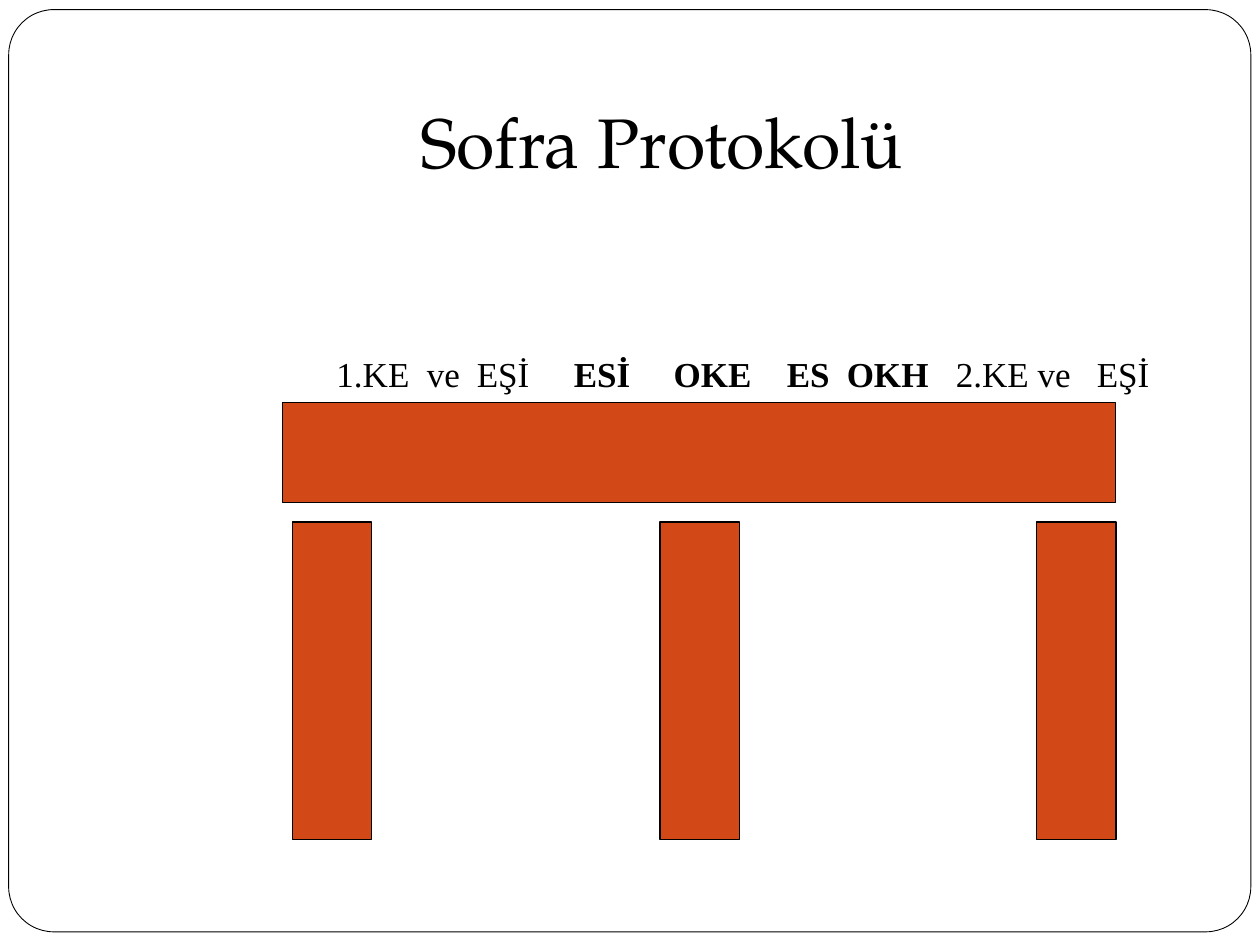
from lxml import etree
from pptx import Presentation
from pptx.dml.color import RGBColor
from pptx.enum import shapes, text
from pptx.oxml.ns import qn
from pptx.util import Pt

BLACK = RGBColor(0, 0, 0)
WHITE = RGBColor(255, 255, 255)
RUST = RGBColor(0xD3, 0x48, 0x17)

# Seats along the head table: tab stop, words, bold
SEATS = [
    (119, "1.KE", False), (170.6, "ve", False), (199.2, "EŞİ", False),
    (254.6, "ESİ", True), (311.7, "OKE", True), (376.3, "ES", True),
    (410.6, "OKH", True), (472.9, "2.KE ve", False), (553.5, "EŞİ", False),
]


def block(slide, box, fill, line, kind=shapes.MSO_SHAPE.RECTANGLE):
    shape = slide.shapes.add_shape(kind, *map(Pt, box))
    shape.shadow.inherit = False
    shape.fill.solid()
    shape.fill.fore_color.rgb = fill
    shape.line.color.rgb = BLACK
    shape.line.width = Pt(line)
    return shape


def style(font, name, size):
    font.name, font.size = name, Pt(size)
    font.color.rgb = BLACK


def frame(slide, box):
    shape = block(slide, box, WHITE, 0.5, shapes.MSO_SHAPE.ROUNDED_RECTANGLE)
    shape.adjustments[0] = 0.049
    # Send behind the title
    slide.shapes._spTree.insert(2, shape._element)


def title(slide, box):
    shape = slide.shapes.title
    shape.left, shape.top, shape.width, shape.height = map(Pt, box)
    body = shape.text_frame
    body.text = "Sofra Protokolü"
    body.auto_size = text.MSO_AUTO_SIZE.NONE
    body.vertical_anchor = text.MSO_ANCHOR.BOTTOM
    body.margin_bottom = Pt(7.2)
    para = body.paragraphs[0]
    para.alignment = text.PP_ALIGN.CENTER
    style(para.font, "TeX Gyre Pagella", 40)


def seats(slide, box):
    body = slide.shapes.add_textbox(*map(Pt, box)).text_frame
    body.word_wrap = True
    para = body.paragraphs[0]
    para.space_before = Pt(6.4)
    # One tab stop for each seat
    tabs = etree.SubElement(para._p.get_or_add_pPr(), qn("a:tabLst"))
    for stop, _, _ in SEATS:
        etree.SubElement(tabs, qn("a:tab"), pos=str(Pt(stop)), algn="l")
    # The larger first tab sets the height of the line
    lead = para.add_run()
    lead.text = "\t"
    style(lead.font, "Times New Roman", 32)
    for i, (_, words, bold) in enumerate(SEATS):
        run = para.add_run()
        run.text = words if i == 0 else "\t" + words
        style(run.font, "Times New Roman", 20)
        run.font.bold = bold


def table(slide, box):
    left, top, width, height = box
    # Head table
    block(slide, (left, top, width, 56.9), RUST, 0.75)
    # Three side tables, bottom-aligned with the box
    leg, tall = 45.4, 181.4
    for step in (5.8, 215.8, width - leg):
        block(slide, (left + step, top + height - tall, leg, tall), RUST, 0.75)


def main():
    deck = Presentation()
    deck.slide_width, deck.slide_height = Pt(720), Pt(540)
    slide = deck.slides.add_slide(deck.slide_layouts[5])
    frame(slide, (5, 5.5, 709.8, 527))
    title(slide, (72, 21.6, 612, 90))
    seats(slide, (66.2, 185.8, 605.5, 333.4))
    table(slide, (161.3, 230.2, 476.4, 249.4))
    deck.save("out.pptx")


if __name__ == "__main__":
    main()
